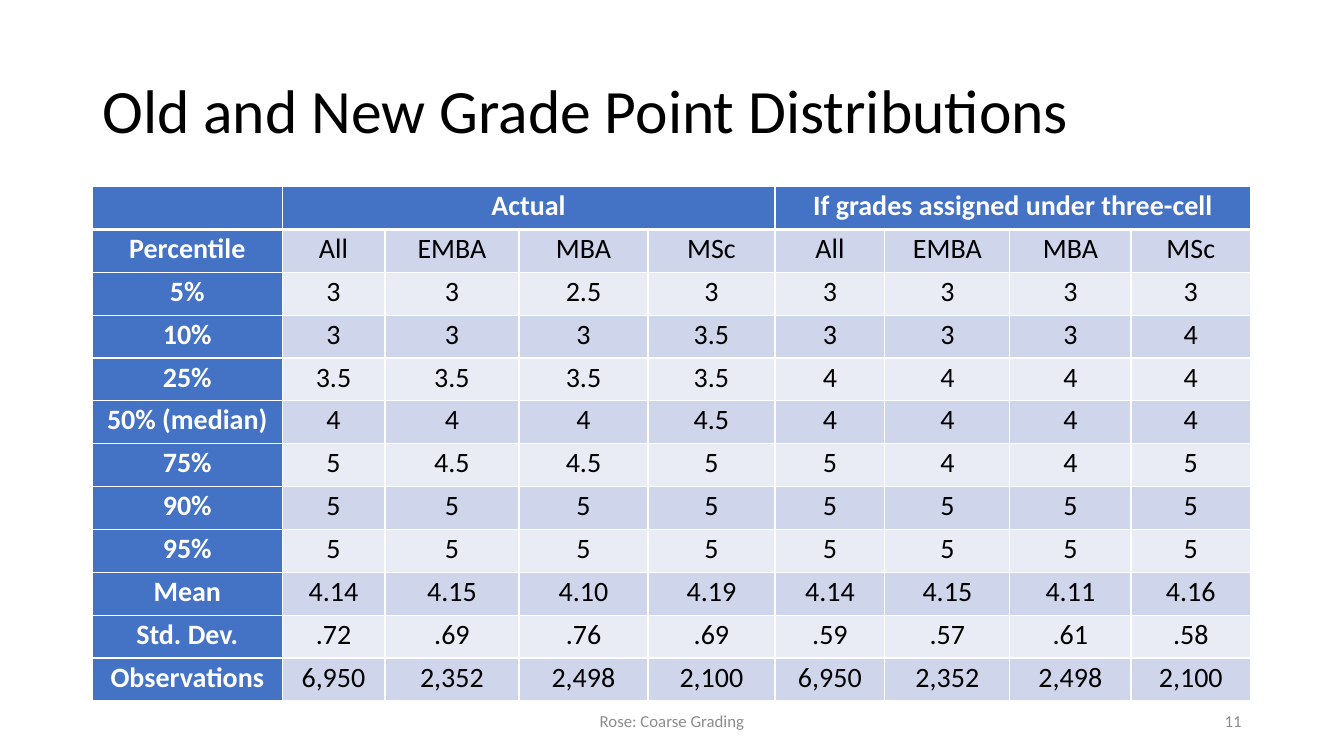
from lxml import etree
from pptx import Presentation
from pptx.dml.color import RGBColor
from pptx.enum import text
from pptx.oxml import ns
from pptx.util import Cm, Pt

FONT = "Calibri"
BLACK = RGBColor(0x00, 0x00, 0x00)
WHITE = RGBColor(0xFF, 0xFF, 0xFF)
GREY = RGBColor(0x8C, 0x8C, 0x8C)
BLUE = RGBColor(0x44, 0x72, 0xC4)
BAND_DARK = RGBColor(0xCF, 0xD5, 0xEA)
BAND_LIGHT = RGBColor(0xE9, 0xEB, 0xF5)

LEFT, CENTER, RIGHT = text.PP_ALIGN.LEFT, text.PP_ALIGN.CENTER, text.PP_ALIGN.RIGHT

COL_WIDTHS = [4.78, 2.59, 3.38, 3.25, 3.2, 2.77, 3.15, 3.05, 3.02]
ROW_HEIGHT = 1.08
GROUPS = {1: "Actual", 5: "If grades assigned under three-cell"}
PROGRAMMES = ["All", "EMBA", "MBA", "MSc"]
COUNTS = ["6,950", "2,352", "2,498", "2,100"]
GRADES = [
    ["Percentile"] + PROGRAMMES * 2,
    ["5%", "3", "3", "2.5", "3", "3", "3", "3", "3"],
    ["10%", "3", "3", "3", "3.5", "3", "3", "3", "4"],
    ["25%", "3.5", "3.5", "3.5", "3.5", "4", "4", "4", "4"],
    ["50% (median)", "4", "4", "4", "4.5", "4", "4", "4", "4"],
    ["75%", "5", "4.5", "4.5", "5", "5", "4", "4", "5"],
    ["90%"] + ["5"] * 8,
    ["95%"] + ["5"] * 8,
    ["Mean", "4.14", "4.15", "4.10", "4.19", "4.14", "4.15", "4.11", "4.16"],
    ["Std. Dev.", ".72", ".69", ".76", ".69", ".59", ".57", ".61", ".58"],
    ["Observations"] + COUNTS * 2,
]


def style_paragraph(p, size, color, align, bold=False, spacing=None):
    p.alignment = align
    p.line_spacing = spacing
    p.font.name = FONT
    p.font.size = Pt(size)
    p.font.bold = bold
    p.font.color.rgb = color


def add_text(s, content, left, top, width, height, size, color, align, spacing=None):
    tf = s.shapes.add_textbox(Cm(left), Cm(top), Cm(width), Cm(height)).text_frame
    tf.word_wrap = True
    tf.vertical_anchor = text.MSO_ANCHOR.MIDDLE
    tf.text = content
    style_paragraph(tf.paragraphs[0], size, color, align, spacing=spacing)


def set_borders(cell, top=1, bottom=1):
    tc_pr = cell._tc.get_or_add_tcPr()
    for side, points in (("L", 1), ("R", 1), ("T", top), ("B", bottom)):
        ln = etree.SubElement(tc_pr, ns.qn(f"a:ln{side}"), w=str(Pt(points)))
        fill = etree.SubElement(ln, ns.qn("a:solidFill"))
        etree.SubElement(fill, ns.qn("a:srgbClr"), val=str(WHITE))


def fill_cell(cell, content, row, col):
    heading = row == 0 or col == 0
    # The header row is divided from the body by a thicker rule
    set_borders(cell, top=3 if row == 1 else 1, bottom=3 if row == 0 else 1)
    cell.fill.solid()
    cell.fill.fore_color.rgb = BLUE if heading else BAND_DARK if row % 2 else BAND_LIGHT
    cell.margin_left = cell.margin_right = Cm(0.18)
    cell.margin_top = cell.margin_bottom = 0
    cell.text = content
    style_paragraph(cell.text_frame.paragraphs[0], 20, WHITE if heading else BLACK,
                    CENTER, bold=heading, spacing=1.07)


def add_grade_table(s, left, top):
    rows = [[GROUPS.get(col, "") for col in range(len(COL_WIDTHS))]] + GRADES
    table = s.shapes.add_table(len(rows), len(COL_WIDTHS), Cm(left), Cm(top),
                               Cm(sum(COL_WIDTHS)), Cm(ROW_HEIGHT * len(rows))).table
    for column, width in zip(table.columns, COL_WIDTHS):
        column.width = Cm(width)
    for r, values in enumerate(rows):
        table.rows[r].height = Cm(ROW_HEIGHT)
        for c, value in enumerate(values):
            fill_cell(table.cell(r, c), value, r, c)
    for c in GROUPS:
        table.cell(0, c).merge(table.cell(0, c + len(PROGRAMMES) - 1))


def main():
    prs = Presentation()
    prs.slide_width, prs.slide_height = Cm(33.87), Cm(19.05)
    s = prs.slides.add_slide(prs.slide_layouts[6])

    # Title
    add_text(s, "Old and New Grade Point Distributions",
             2.33, 1.01, 29.21, 3.68, 44, BLACK, LEFT, spacing=0.9)
    # Grade distributions
    add_grade_table(s, 2.33, 4.7)
    # Footer and slide number
    add_text(s, "Rose: Coarse Grading", 11.22, 17.66, 11.43, 1.01, 12, GREY, CENTER)
    add_text(s, "11", 23.92, 17.66, 7.62, 1.01, 12, GREY, RIGHT)

    prs.save("out.pptx")


if __name__ == "__main__":
    main()
